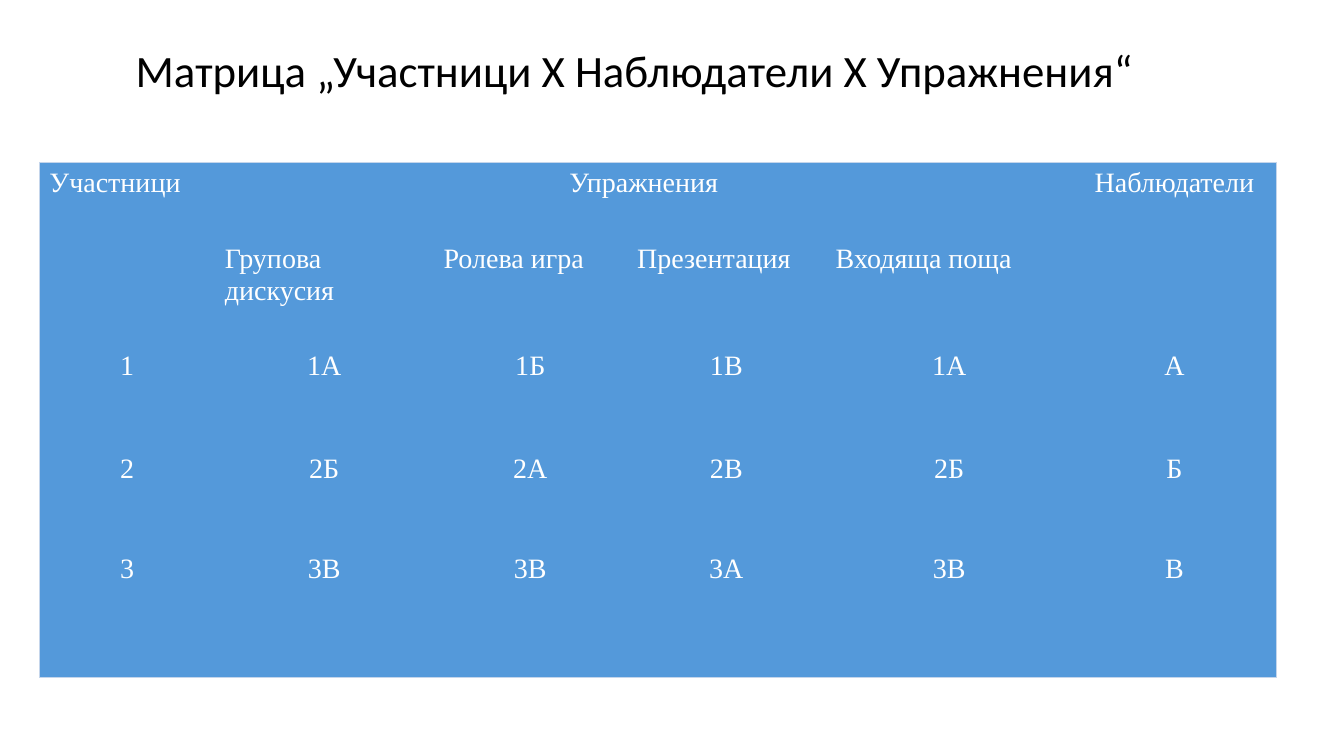
from lxml import etree
from pptx import Presentation
from pptx.dml.color import RGBColor
from pptx.enum.text import MSO_ANCHOR, PP_ALIGN
from pptx.oxml.ns import qn
from pptx.util import Inches, Pt

CENTER, LEFT = PP_ALIGN.CENTER, PP_ALIGN.LEFT
MIDDLE = MSO_ANCHOR.MIDDLE

BLACK = RGBColor(0x00, 0x00, 0x00)
WHITE = RGBColor(0xFF, 0xFF, 0xFF)
BLUE = RGBColor(0x54, 0x99, 0xDA)
PALE_BLUE = RGBColor(0xC4, 0xD5, 0xEB)

TITLE_ONLY_LAYOUT = 5

COLUMN_WIDTHS = [1.74, 2.17, 1.92, 1.97, 2.45, 2.02]
ROW_HEIGHTS = [0.76, 1.06, 1.02, 0.99, 1.28]
MATRIX = [
    ["Участници", "Упражнения", "", "", "", "Наблюдатели"],
    ["", "Групова дискусия", "Ролева игра", "Презентация", "Входяща поща", ""],
    ["1", "1А", "1Б", "1В", "1А", "А"],
    ["2", "2Б", "2А", "2В", "2Б", "Б"],
    ["3", "3В", "3В", "3А", "3В", "В"],
]
# First and last cell of each merged area, as (row, column)
MERGES = [((0, 0), (1, 0)), ((0, 1), (0, 4)), ((0, 5), (1, 5))]


class SlideBuilder:
    """Holds the style and the current slide."""

    title_font, title_size = "Calibri", Pt(32)
    table_font, table_size = "Times New Roman", Pt(20)
    border_width = Pt(0.5)

    def __init__(self, presentation):
        layout = presentation.slide_layouts[TITLE_ONLY_LAYOUT]
        self.slide = presentation.slides.add_slide(layout)

    def add_run(self, paragraph, text, font, size, color):
        run = paragraph.add_run()
        run.text = text
        run.font.name = font
        run.font.size = size
        run.font.bold = False
        run.font.color.rgb = color

    def add_title(self, text, left, top, width, height):
        title = self.slide.shapes.title
        title.left, title.top = Inches(left), Inches(top)
        title.width, title.height = Inches(width), Inches(height)
        title.text_frame.word_wrap = True
        title.text_frame.vertical_anchor = MIDDLE
        paragraph = title.text_frame.paragraphs[0]
        paragraph.alignment = CENTER
        paragraph.line_spacing = 0.9
        self.add_run(paragraph, text, self.title_font, self.title_size, BLACK)

    def set_borders(self, cell, edges):
        """Draw the sides marked true in edges and clear the others."""
        properties = cell._tc.get_or_add_tcPr()
        for side, visible in edges.items():
            line = etree.SubElement(properties, qn(f"a:ln{side}"), w=str(self.border_width))
            if visible:
                fill = etree.SubElement(line, qn("a:solidFill"))
                etree.SubElement(fill, qn("a:srgbClr"), val=str(PALE_BLUE))
            else:
                etree.SubElement(line, qn("a:noFill"))

    def add_table(self, rows, widths, heights, merges, left, top):
        frame = self.slide.shapes.add_table(
            len(rows), len(widths), Inches(left), Inches(top),
            Inches(sum(widths)), Inches(sum(heights)))
        table = frame.table
        table.first_row = table.horz_banding = False
        for column, width in zip(table.columns, widths):
            column.width = Inches(width)
        for row, height in zip(table.rows, heights):
            row.height = Inches(height)
        for first, last in merges:
            table.cell(*first).merge(table.cell(*last))

        last_row, last_column = len(rows) - 1, len(widths) - 1
        for r, texts in enumerate(rows):
            for c, text in enumerate(texts):
                cell = table.cell(r, c)
                # Only the outer frame of the table is drawn
                self.set_borders(cell, {"L": c == 0, "R": c == last_column,
                                        "T": r == 0, "B": r == last_row})
                cell.fill.solid()
                cell.fill.fore_color.rgb = BLUE
                if text:
                    paragraph = cell.text_frame.paragraphs[0]
                    is_left = r == 1 or (r, c) == (0, 0)
                    paragraph.alignment = LEFT if is_left else CENTER
                    self.add_run(paragraph, text, self.table_font, self.table_size, WHITE)


def main():
    presentation = Presentation()
    presentation.slide_width = Inches(13.33)
    presentation.slide_height = Inches(7.5)
    builder = SlideBuilder(presentation)

    # Title
    builder.add_title("Матрица „Участници Х Наблюдатели Х Упражнения“",
                      0.74, 0.35, 11.11, 0.75)

    # Matrix of participants, exercises and observers
    builder.add_table(MATRIX, COLUMN_WIDTHS, ROW_HEIGHTS, MERGES, 0.39, 1.61)

    presentation.save("out.pptx")


if __name__ == "__main__":
    main()
